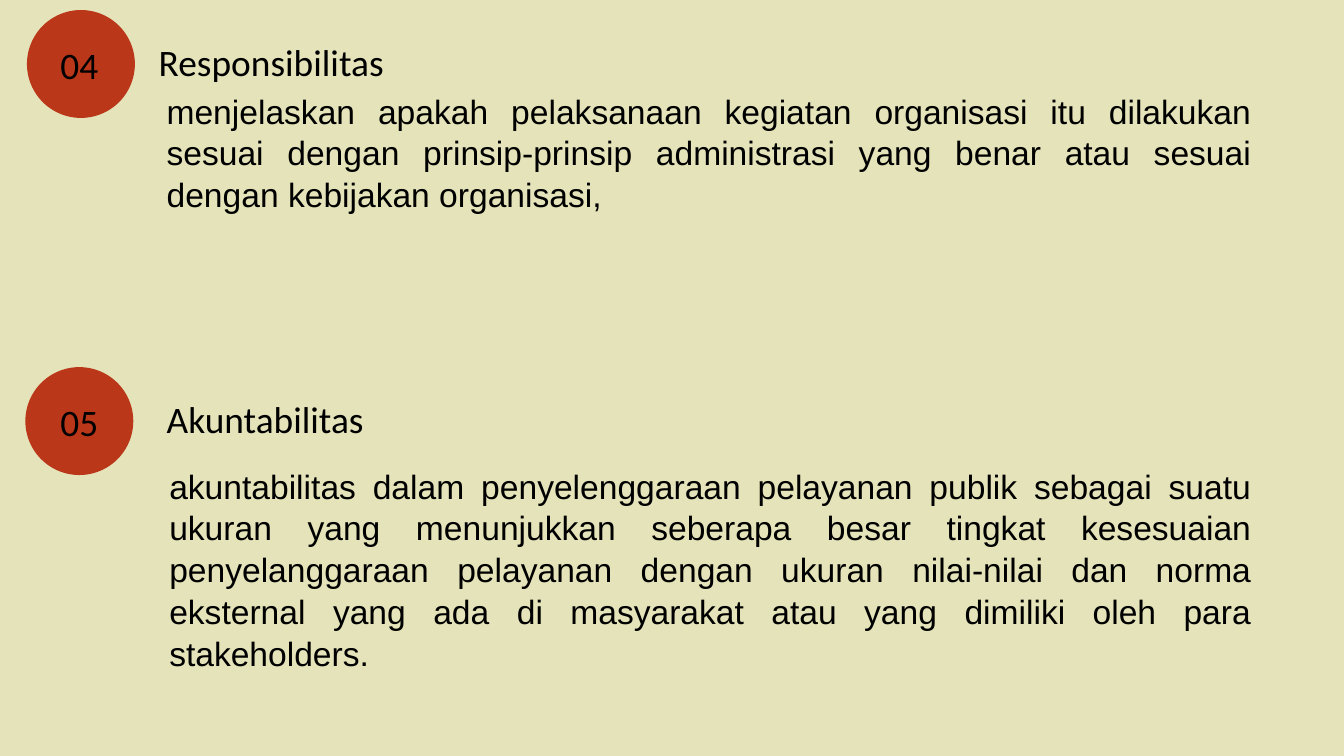
from pptx import Presentation
from pptx.dml.color import RGBColor
from pptx.enum.shapes import MSO_SHAPE as SHAPE
from pptx.enum.text import MSO_ANCHOR as ANCHOR, PP_ALIGN as ALIGN
from pptx.util import Cm, Pt

RESPONSIBILITAS = (
    "menjelaskan apakah pelaksanaan kegiatan organisasi itu dilakukan sesuai "
    "dengan prinsip-prinsip administrasi yang benar atau sesuai dengan "
    "kebijakan organisasi,"
)
AKUNTABILITAS = (
    "akuntabilitas dalam penyelenggaraan pelayanan publik sebagai suatu ukuran "
    "yang menunjukkan seberapa besar tingkat kesesuaian penyelanggaraan "
    "pelayanan dengan ukuran nilai-nilai dan norma eksternal yang ada di "
    "masyarakat atau yang dimiliki oleh para stakeholders."
)


def color(value):
    """Turn a hex string into a colour."""
    return RGBColor.from_string(value)


def add_circle(slide, left, top):
    """Draw the red disc behind a number."""
    sp = slide.shapes.add_shape(SHAPE.OVAL, Cm(left), Cm(top), Cm(2.04), Cm(2.04))
    sp.shadow.inherit = False
    sp.fill.solid()
    sp.fill.fore_color.rgb = color("BA371A")
    sp.line.fill.background()


def add_text(slide, box, text, font, size, align, anchor, insets=(0.25, 0.25)):
    """Add a one-paragraph text box and return its paragraph."""
    sp = slide.shapes.add_textbox(*map(Cm, box))
    tf = sp.text_frame
    tf.word_wrap = True
    tf.vertical_anchor = anchor
    tf.margin_left = tf.margin_right = Cm(insets[0])
    tf.margin_top = tf.margin_bottom = Cm(insets[1])
    p = tf.paragraphs[0]
    p.text = text
    p.alignment = align
    p.font.name = font
    p.font.size = Pt(size)
    p.font.color.rgb = color("000000")
    return p


def add_principle(slide, top, circle_left, number, title_left, title, body_box, body):
    """Add a numbered principle with its title and explanation."""
    add_circle(slide, circle_left, top)
    add_text(slide, (0.48, top + 0.4, 2.04, 1.25), number,
             "Calibri", 20, ALIGN.CENTER, ANCHOR.MIDDLE)
    add_text(slide, (title_left, top + 0.29, 6.4, 1.35), title,
             "Calibri", 20, ALIGN.LEFT, ANCHOR.BOTTOM)
    p = add_text(slide, body_box, body,
                 "Arial", 18, ALIGN.JUSTIFY, ANCHOR.TOP, (0.25, 0.13))
    p.line_spacing = 1.04


def main():
    """Build the slide and save it."""
    prs = Presentation()
    prs.slide_width, prs.slide_height = Cm(25.4), Cm(14.29)
    slide = prs.slides.add_slide(prs.slide_layouts[6])
    slide.background.fill.solid()
    slide.background.fill.fore_color.rgb = color("E4E3B9")
    add_principle(slide, 0.19, 0.51, "04", 2.75, "Responsibilitas",
                  (2.9, 1.55, 21, 2.57), RESPONSIBILITAS)
    add_principle(slide, 6.94, 0.48, "05", 2.9, "Akuntabilitas",
                  (2.95, 8.64, 20.95, 4.11), AKUNTABILITAS)
    prs.save("out.pptx")


if __name__ == "__main__":
    main()
